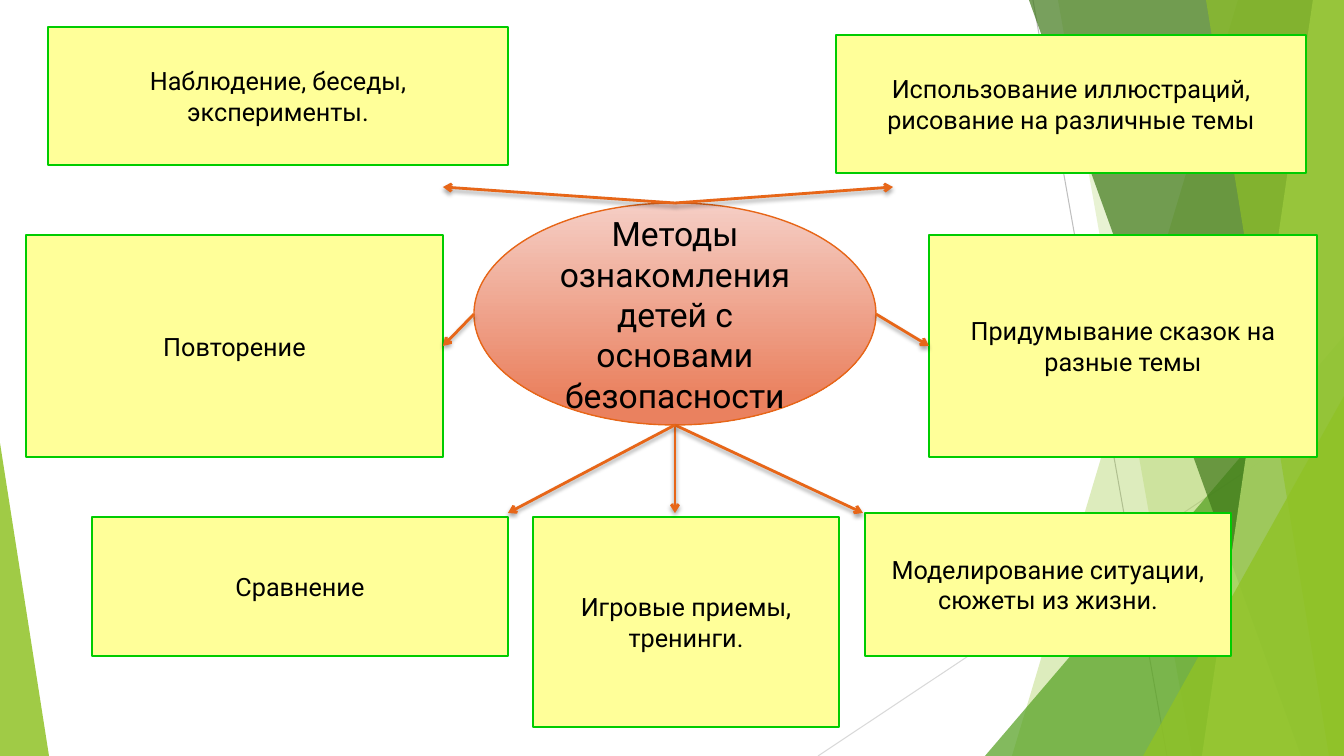
import pptx
import pptx.dml.color
import pptx.enum.shapes
import pptx.enum.text
import pptx.oxml
import pptx.oxml.ns
import pptx.util
from lxml import etree

MSO = pptx.enum.shapes.MSO_SHAPE
STRAIGHT = pptx.enum.shapes.MSO_CONNECTOR.STRAIGHT
PX = 914400 / 100.8
W, H = 1344, 756
GREEN, ORANGE = "90C226", "E76618"
NS = pptx.oxml.ns.nsdecls("a")


def emu(*lengths):
    return [pptx.util.Emu(round(n * PX)) for n in lengths]


def rgb(color):
    return pptx.dml.color.RGBColor.from_string(color)


prs = pptx.Presentation()
prs.slide_width, prs.slide_height = emu(W, H)
s = prs.slides.add_slide(prs.slide_layouts[6])

# Background: thin lines, then translucent facets
for ends, color in [((1033, 0, 1167, H), "BFBFBF"), ((W, 406, 818, H), "D9D9D9")]:
    line = s.shapes.add_connector(STRAIGHT, *emu(*ends))
    line.line.color.rgb = rgb(color)
    line.line.width = pptx.util.Pt(0.75)
    etree.SubElement(line._element.spPr, pptx.oxml.ns.qn("a:effectLst"))

# Two numbers: top and bottom x of a band reaching the right edge.
# Five numbers: a triangle's box and the place of its apex.
facets = [
    ((1238, 1012), GREEN, 30),
    ((1058, 1192), GREEN, 20),
    ((985, 336, 359, 420, 1), "54A021", 72),
    ((1029, 1301), "3F7819", 70),
    ((1313, 1202), "C0E474", 70),
    ((1206, 1329), GREEN, 65),
    ((1143, 396, 201, 360, 1), GREEN, 80),
    ((0, 443, 49, 313, 0), GREEN, 85),
]
for geometry, color, opacity in facets:
    if len(geometry) == 2:
        top, bottom = geometry
        builder = s.shapes.build_freeform(top, 0, scale=PX)
        builder.add_line_segments([(W, 0), (W, H), (bottom, H)])
        sp = builder.convert_to_shape()
    else:
        *box, apex = geometry
        sp = s.shapes.add_shape(MSO.ISOSCELES_TRIANGLE, *emu(*box))
        sp.adjustments[0] = apex
    sp.shadow.inherit = False
    sp.line.fill.background()
    sp.fill.solid()
    sp.fill.fore_color.rgb = rgb(color)
    srgb = sp._element.spPr.find(".//" + pptx.oxml.ns.qn("a:srgbClr"))
    etree.SubElement(srgb, pptx.oxml.ns.qn("a:alpha"), val=str(opacity * 1000))

# Central topic and the methods around it
topic = "Методы ознакомления детей с основами безопасности"
repetition = "Повторение"
tales = "Придумывание сказок на разные темы"
nodes = [
    (topic, 474, 203, 402, 222),
    (tales, 929, 235, 388, 222),
    ("Использование иллюстраций, рисование на различные темы", 836, 35, 470, 138),
    ("Наблюдение, беседы, эксперименты.", 48, 27, 460, 138),
    ("Моделирование ситуации, сюжеты из жизни.", 865, 513, 366, 143),
    ("Игровые приемы, тренинги.", 533, 517, 306, 210),
    ("Сравнение", 92, 517, 416, 139),
    (repetition, 26, 235, 417, 222),
]
shapes = {}
for text, *box in nodes:
    is_topic = text == topic
    sp = s.shapes.add_shape(MSO.OVAL if is_topic else MSO.RECTANGLE, *emu(*box))
    sp.shadow.inherit = False
    if is_topic:
        sp.fill.gradient()
        sp.fill.gradient_angle = 270
        for stop, color, position in zip(sp.fill.gradient_stops, ("F5CEC5", "EA815F"), (0, 0.88)):
            stop.color.rgb = rgb(color)
            stop.position = position
    else:
        sp.fill.solid()
        sp.fill.fore_color.rgb = rgb("FFFF99")
    sp.line.color.rgb = rgb(ORANGE if is_topic else "00CC00")
    sp.line.width = pptx.util.Pt(1 if is_topic else 1.5)
    tf = sp.text_frame
    tf.text = text
    tf.word_wrap = True
    tf.vertical_anchor = pptx.enum.text.MSO_ANCHOR.MIDDLE
    p = tf.paragraphs[0]
    p.alignment = pptx.enum.text.PP_ALIGN.CENTER
    font = p.runs[0].font
    font.name = "Roboto"
    font.size = pptx.util.Pt(24 if is_topic else 18)
    font.color.rgb = rgb("000000")
    shapes[text] = sp

# Arrows from the topic; the side ones are joined to their boxes
arrows = [
    (675, 203, 893, 187, None),
    (675, 203, 443, 187, None),
    (876, 314, 929, 346, (tales, 1)),
    (474, 314, 443, 346, (repetition, 3)),
    (675, 425, 863, 513, None),
    (675, 425, 675, 513, None),
    (675, 425, 508, 513, None),
]
for *ends, target in arrows:
    arrow = s.shapes.add_connector(STRAIGHT, *emu(*ends))
    if target:
        name, side = target
        arrow.end_connect(shapes[name], side)
    arrow.line.color.rgb = rgb(ORANGE)
    arrow.line.width = pptx.util.Pt(2)
    spPr = arrow._element.spPr
    etree.SubElement(spPr.ln, pptx.oxml.ns.qn("a:tailEnd"), type="arrow")
    spPr.append(pptx.oxml.parse_xml(
        f'<a:effectLst {NS}><a:outerShdw blurRad="38100" dist="25400" dir="5400000" rotWithShape="0">'
        '<a:srgbClr val="000000"><a:alpha val="35000"/></a:srgbClr></a:outerShdw></a:effectLst>'))

prs.save("out.pptx")
